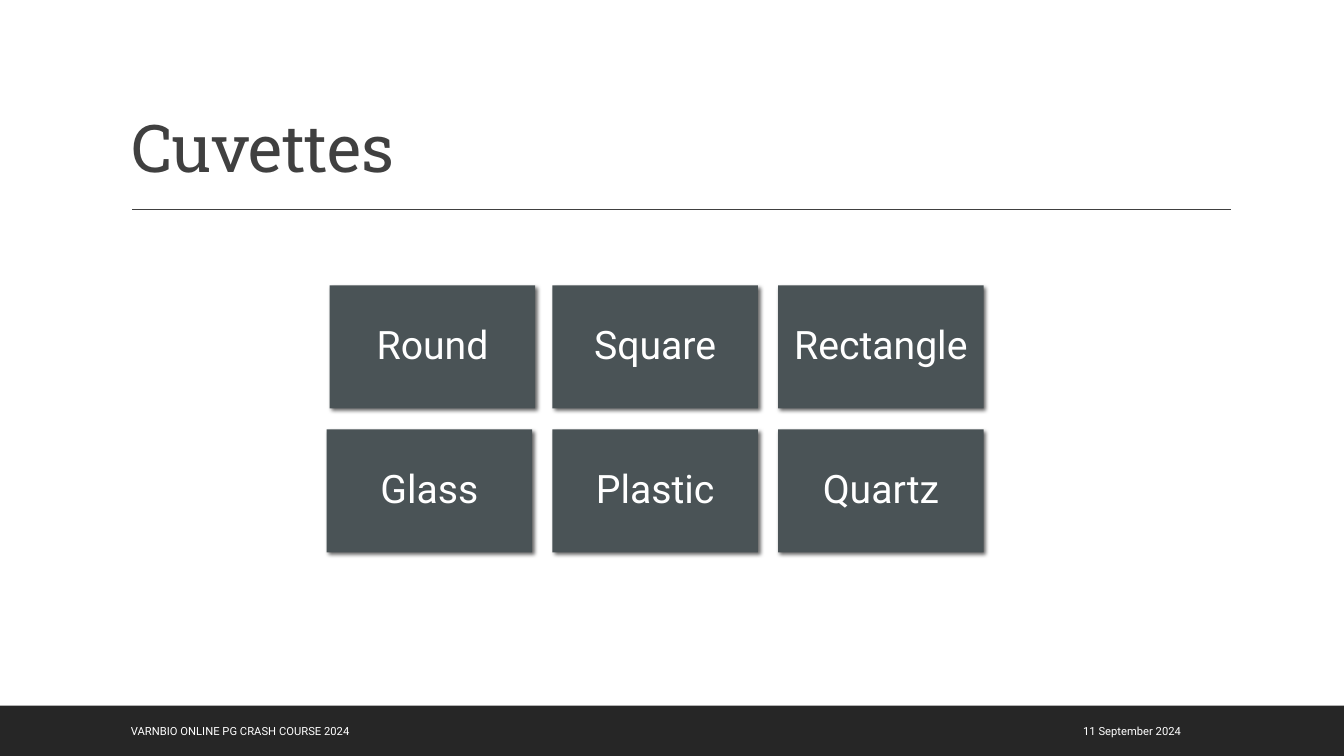
from dataclasses import dataclass

from lxml.etree import SubElement
from pptx import Presentation
from pptx.dml.color import RGBColor as Rgb
from pptx.enum.shapes import MSO_CONNECTOR as Link, MSO_SHAPE as Kind
from pptx.enum.text import MSO_ANCHOR as Anchor, MSO_AUTO_SIZE as Fit, PP_ALIGN as Align
from pptx.oxml.ns import qn
from pptx.util import Cm, Pt


@dataclass(frozen=True)
class Theme:
    ink: str = "404040"
    bar: str = "262626"
    tile: str = "4A5356"
    white: str = "FFFFFF"
    shade: str = "000000"
    head: str = "Roboto Slab"
    body: str = "Roboto"
    title: float = 47
    label: float = 28
    foot: float = 8


@dataclass(frozen=True)
class Box:
    left: float
    top: float
    width: float
    height: float

    def place(self) -> tuple:
        return Cm(self.left), Cm(self.top), Cm(self.width), Cm(self.height)


@dataclass(frozen=True)
class Tile:
    text: str
    col: int
    row: int
    shift: float = 0


@dataclass(frozen=True)
class Note:
    text: str
    box: Box
    align: Align


THEME = Theme()

# Tile grid, in centimetres
LEFT, TOP = 8.23, 7.19
WIDE, HIGH = 5.18, 3.1
STEP_X, STEP_Y = 5.69, 3.63

TILES = [
    Tile("Round", 0, 0, 0.08), Tile("Square", 1, 0), Tile("Rectangle", 2, 0),
    Tile("Glass", 0, 1), Tile("Plastic", 1, 1), Tile("Quartz", 2, 1),
]
NOTES = [
    Note("11 September 2024", Box(22.83, 17.91, 7.19, 1.02), Align.RIGHT),
    Note("VARNBIO ONLINE PG CRASH COURSE 2024", Box(3.05, 17.91, 18.95, 1.02), Align.LEFT),
]


def assign(item, form: dict) -> None:
    for name, value in form.items():
        setattr(item, name, value)


def write(shape, text: str, face: str, size: float, tint: str, align: Align,
          anchor: Anchor = Anchor.MIDDLE, lead: float = 1.0) -> None:
    frame = shape.text_frame
    frame.text = text
    assign(frame, {"word_wrap": True, "auto_size": Fit.NONE, "vertical_anchor": anchor})
    para = frame.paragraphs[0]
    assign(para, {"alignment": align, "line_spacing": lead})
    font = para.runs[0].font
    assign(font, {"name": face, "size": Pt(size)})
    font.color.rgb = Rgb.from_string(tint)


def add_rect(slide, box: Box, tint: str):
    rect = slide.shapes.add_shape(Kind.RECTANGLE, *box.place())
    rect.shadow.inherit = False
    rect.fill.solid()
    rect.fill.fore_color.rgb = Rgb.from_string(tint)
    rect.line.fill.background()
    return rect


def add_shade(shape) -> None:
    glow = SubElement(shape._element.spPr.find(qn("a:effectLst")), qn("a:outerShdw"),
                      blurRad=str(Pt(3)), dist=str(Pt(2)), dir="2700000",
                      algn="tl", rotWithShape="0")
    tint = SubElement(glow, qn("a:srgbClr"), val=THEME.shade)
    SubElement(tint, qn("a:alpha"), val="60000")


def add_tile(slide, tile: Tile) -> None:
    box = Box(LEFT + tile.col * STEP_X + tile.shift, TOP + tile.row * STEP_Y, WIDE, HIGH)
    rect = add_rect(slide, box, THEME.tile)
    add_shade(rect)
    write(rect, tile.text, THEME.body, THEME.label, THEME.white, Align.CENTER, lead=0.9)
    sides = ("left", "top", "right", "bottom")
    assign(rect.text_frame, {f"margin_{side}": Cm(0.3) for side in sides})


def add_note(slide, note: Note) -> None:
    box = slide.shapes.add_textbox(*note.box.place())
    write(box, note.text, THEME.body, THEME.foot, THEME.white, note.align)


def add_rule(slide) -> None:
    rule = slide.shapes.add_connector(Link.STRAIGHT, Cm(3.33), Cm(5.28), Cm(31.01), Cm(5.28))
    rule.line.color.rgb = Rgb.from_string(THEME.ink)
    rule.line.width = Pt(1)
    SubElement(rule._element.spPr, qn("a:effectLst"))


def set_title(slide, text: str) -> None:
    title = slide.shapes.title
    spots = ("left", "top", "width", "height")
    assign(title, dict(zip(spots, Box(3.05, 0.79, 27.94, 4.04).place())))
    write(title, text, THEME.head, THEME.title, THEME.ink, Align.LEFT, Anchor.BOTTOM, 0.9)
    title.text_frame.paragraphs[0].runs[0].font._element.set("spc", "-50")


def main() -> None:
    deck = Presentation()
    assign(deck, {"slide_width": Cm(33.87), "slide_height": Cm(19.05)})
    slide = deck.slides.add_slide(deck.slide_layouts[5])

    # Heading and its rule
    set_title(slide, "Cuvettes")
    add_rule(slide)

    # Shapes and materials
    for tile in TILES:
        add_tile(slide, tile)

    # Footer
    add_rect(slide, Box(0, 17.78, 33.87, 1.27), THEME.bar)
    for note in NOTES:
        add_note(slide, note)

    deck.save("out.pptx")


if __name__ == "__main__":
    main()
